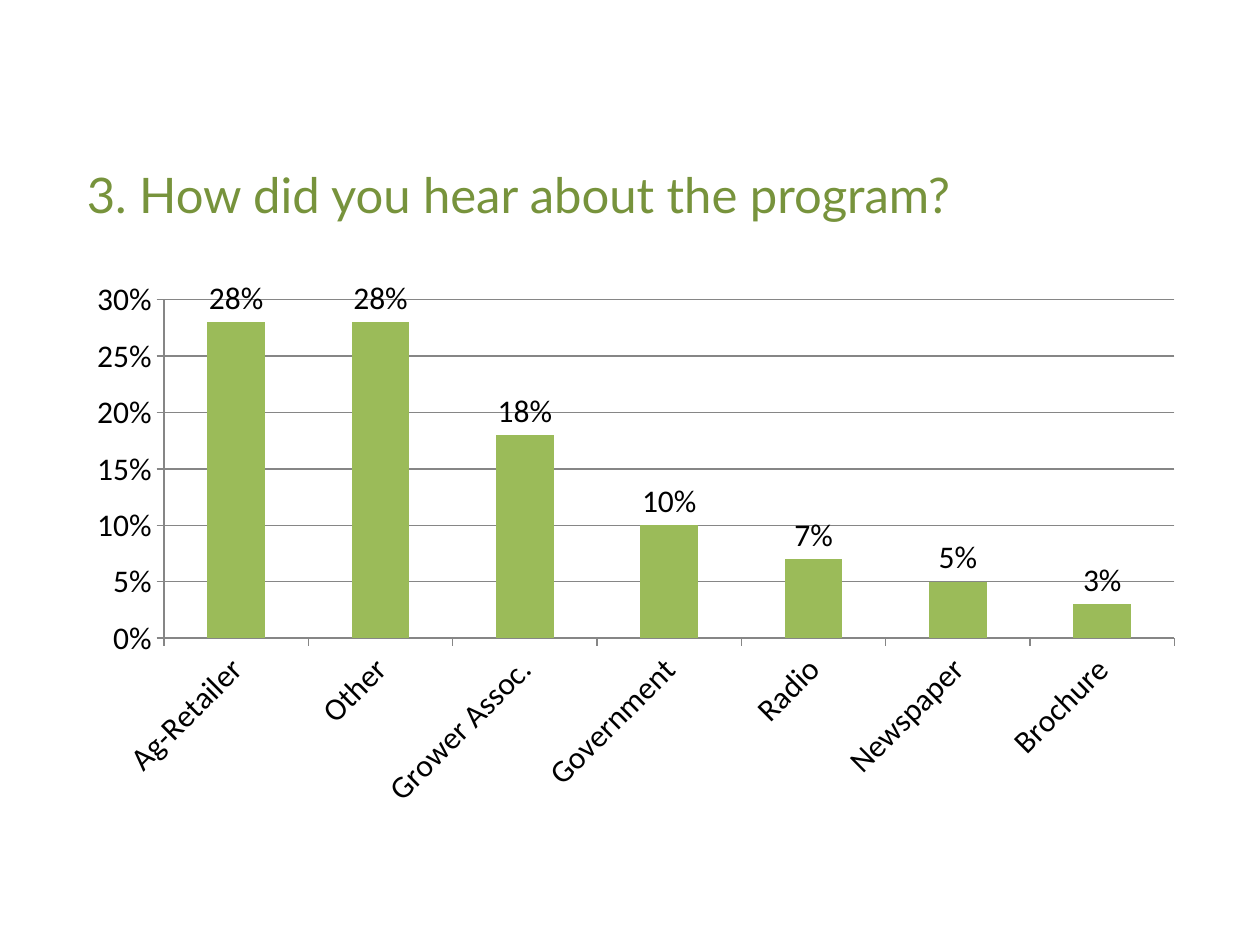
from pptx import Presentation
from pptx.chart.data import CategoryChartData as Data
from pptx.dml.color import RGBColor as Rgb
from pptx.enum.chart import XL_CHART_TYPE as Kind, XL_LABEL_POSITION as Spot, XL_TICK_MARK as Tick
from pptx.enum.text import MSO_ANCHOR as Anchor
from pptx.oxml import parse_xml
from pptx.oxml.ns import nsdecls, qn
from pptx.util import Pt

VOTES = {
    "Ag-Retailer": 0.28,
    "Other": 0.28,
    "Grower Assoc.": 0.18,
    "Government": 0.1,
    "Radio": 0.07,
    "Newspaper": 0.05,
    "Brochure": 0.03,
}


def tint(code):
    """Turn a hex string into a colour."""
    return Rgb.from_string(code)


def add_title(slide, left, top, width, height):
    """Place the question in its box."""
    box = slide.shapes.add_textbox(Pt(left), Pt(top), Pt(width), Pt(height))
    frame = box.text_frame
    frame.word_wrap = True
    frame.vertical_anchor = Anchor.MIDDLE
    run = frame.paragraphs[0].add_run()
    run.text = "3. How did you hear about the program?"
    run.font.name = "Lato"
    run.font.size = Pt(28)
    run.font.color.rgb = tint("77933C")


def set_plot(chart, x, y, w, h):
    """Fix the inner plot area as shares of the chart box."""
    area = chart.plots[0]._element.getparent()
    for old in area.findall(qn("c:layout")):
        area.remove(old)
    spans = "".join(f'<c:{key} val="{val}"/>' for key, val in zip("xywh", (x, y, w, h)))
    area.insert(0, parse_xml(
        f'<c:layout {nsdecls("c")}><c:manualLayout><c:layoutTarget val="inner"/>'
        f'<c:xMode val="edge"/><c:yMode val="edge"/>{spans}</c:manualLayout></c:layout>'))


def style_axes(chart):
    """Set scale, ticks, grid and slanted names."""
    names, scale = chart.category_axis, chart.value_axis
    scale.minimum_scale, scale.maximum_scale, scale.major_unit = 0, 0.3, 0.05
    scale.has_major_gridlines = True
    scale.tick_labels.number_format = "0%"
    scale.tick_labels.number_format_is_linked = False
    for axis in (names, scale):
        axis.major_tick_mark = Tick.OUTSIDE
        axis.tick_labels.font.size = Pt(18)
    for line in (names.format.line, scale.format.line, scale.major_gridlines.format.line):
        line.color.rgb = tint("868686")
        line.width = Pt(0.75)
    body = names._element.find(qn("c:txPr")).find(qn("a:bodyPr"))
    body.set("rot", "-2700000")
    body.set("vert", "horz")


def add_bars(slide, left, top, width, height):
    """Place the column chart of answers in its box."""
    data = Data(number_format="0%")
    data.categories = list(VOTES)
    data.add_series("Series 1", list(VOTES.values()))
    chart = slide.shapes.add_chart(
        Kind.COLUMN_CLUSTERED, Pt(left), Pt(top), Pt(width), Pt(height), data).chart
    chart.has_legend = chart.has_title = False
    chart.font.name = "Calibri"
    chart.font.size = Pt(18)
    chart.font.color.rgb = tint("000000")
    plot = chart.plots[0]
    plot.vary_by_categories = False
    plot.gap_width = 150
    fill = plot.series[0].format.fill
    fill.solid()
    fill.fore_color.rgb = tint("9BBB59")
    plot.has_data_labels = True
    marks = plot.data_labels
    marks.show_value = True
    marks.number_format = "0%"
    marks.number_format_is_linked = False
    marks.position = Spot.OUTSIDE_END
    style_axes(chart)
    set_plot(chart, 0.08, 0.055, 0.9, 0.615)


def main():
    """Build and save the slide."""
    deck = Presentation()
    deck.slide_width, deck.slide_height = Pt(720), Pt(540)
    slide = deck.slides.add_slide(deck.slide_layouts[6])
    left, width = 42.5, 641.5
    add_title(slide, left, 77, width, 67.5)
    add_bars(slide, left, 154, width, 314.5)
    deck.save("out.pptx")


if __name__ == "__main__":
    main()
